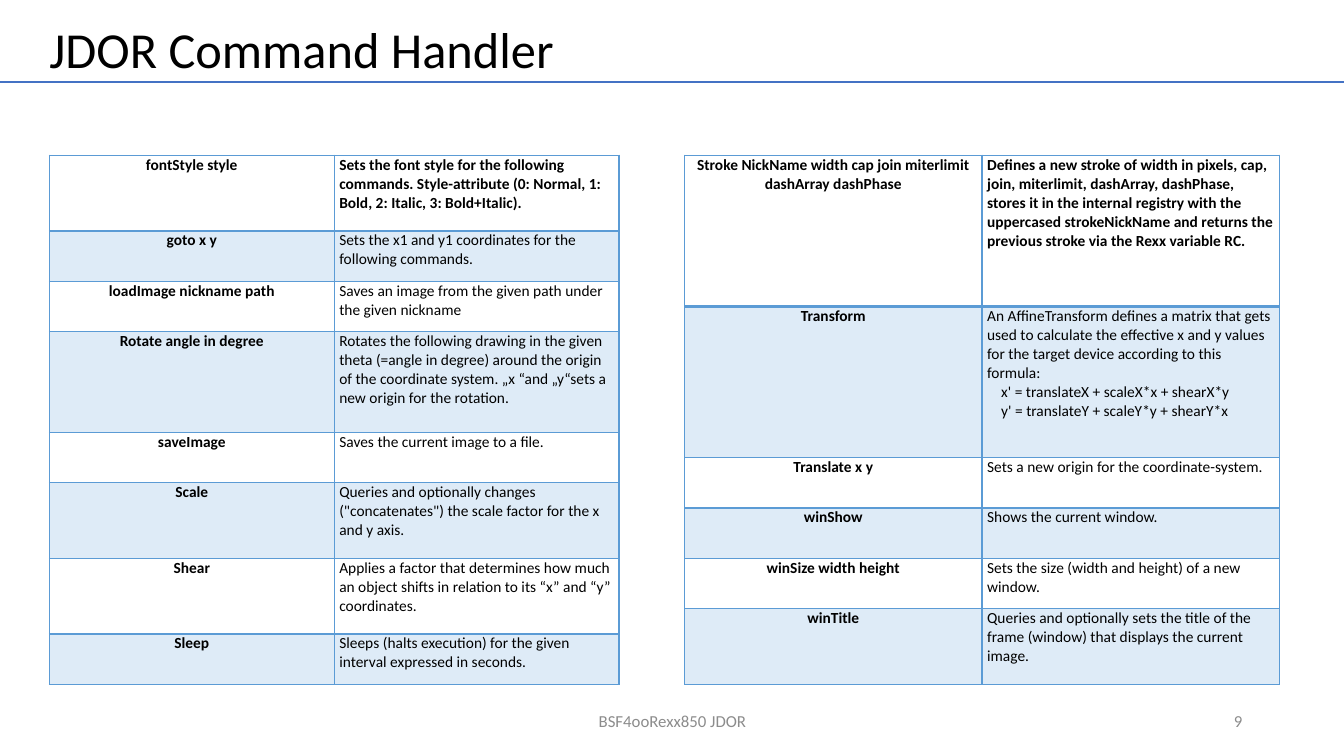
from lxml import etree
from pptx import Presentation
from pptx.dml.color import RGBColor
from pptx.enum.shapes import MSO_CONNECTOR
from pptx.enum.text import MSO_ANCHOR, PP_ALIGN
from pptx.oxml.ns import qn
from pptx.util import Inches, Pt

LEFT, CENTER, RIGHT = PP_ALIGN.LEFT, PP_ALIGN.CENTER, PP_ALIGN.RIGHT
MIDDLE = MSO_ANCHOR.MIDDLE
STRAIGHT = MSO_CONNECTOR.STRAIGHT

FONT = "Calibri"
BLACK, GREY, WHITE = "000000", "8C8C8C", "FFFFFF"
RULE, BORDER, BAND = "4472C4", "5B9BD5", "DEEBF7"

TITLE = "JDOR Command Handler"
FOOTERS = [
    ("BSF4ooRexx850 JDOR", 4.42, 4.5, CENTER),
    ("9", 9.42, 3, RIGHT),
]
TABLE_TOP = 1.54
FORMULA_INDENT = 0.14

DRAWING_COMMANDS = [
    (0.75, "fontStyle style",
     ["Sets the font style for the following commands. Style-attribute "
      "(0: Normal, 1: Bold, 2: Italic, 3: Bold+Italic)."]),
    (0.5, "goto x y",
     ["Sets the x1 and y1 coordinates for the following commands."]),
    (0.5, "loadImage nickname path",
     ["Saves an image from the given path under the given nickname"]),
    (1, "Rotate angle in degree",
     ["Rotates the following drawing in the given theta (=angle in degree) "
      "around the origin of the coordinate system. „x “and „y“sets a new "
      "origin for the rotation."]),
    (0.5, "saveImage", ["Saves the current image to a file."]),
    (0.75, "Scale",
     ['Queries and optionally changes ("concatenates") the scale factor '
      "for the x and y axis."]),
    (0.75, "Shear",
     ["Applies a factor that determines how much an object shifts in "
      "relation to its “x” and “y” coordinates."]),
    (0.5, "Sleep",
     ["Sleeps (halts execution) for the given interval expressed in seconds."]),
]
WINDOW_COMMANDS = [
    (1.5, "Stroke NickName width cap join miterlimit dashArray dashPhase",
     ["Defines a new stroke of width in pixels, cap, join, miterlimit, "
      "dashArray, dashPhase, stores it in the internal registry with the "
      "uppercased strokeNickName and returns the previous stroke via the "
      "Rexx variable RC."]),
    (1.5, "Transform",
     ["An AffineTransform defines a matrix that gets used to calculate the "
      "effective x and y values for the target device according to this "
      "formula:",
      "x' = translateX + scaleX*x + shearX*y\v"
      "y' = translateY + scaleY*y + shearY*x"]),
    (0.5, "Translate x y", ["Sets a new origin for the coordinate-system."]),
    (0.5, "winShow", ["Shows the current window."]),
    (0.5, "winSize width height",
     ["Sets the size (width and height) of a new window."]),
    (0.75, "winTitle",
     ["Queries and optionally sets the title of the frame (window) that "
      "displays the current image."]),
]
TABLES = [(0.49, 5.65, DRAWING_COMMANDS), (6.79, 5.9, WINDOW_COMMANDS)]


def rgb(value):
    return RGBColor.from_string(value)


def format_paragraph(p, size, color, align, bold=False):
    p.alignment = align
    p.font.name = FONT
    p.font.size = Pt(size)
    p.font.bold = bold
    p.font.color.rgb = rgb(color)


def set_borders(cell, bottom_width):
    tcPr = cell._tc.get_or_add_tcPr()
    widths = {"a:lnL": 1, "a:lnR": 1, "a:lnT": 1, "a:lnB": bottom_width}
    for i, (tag, width) in enumerate(widths.items()):
        ln = etree.Element(qn(tag), w=str(Pt(width)))
        fill = etree.SubElement(ln, qn("a:solidFill"))
        etree.SubElement(fill, qn("a:srgbClr"), val=BORDER)
        tcPr.insert(i, ln)


def fill_cell(cell, paragraphs, align, bold, row):
    cell.margin_left = cell.margin_right = Inches(0.05)
    cell.margin_top = cell.margin_bottom = 0
    cell.fill.solid()
    cell.fill.fore_color.rgb = rgb(BAND if row % 2 else WHITE)
    set_borders(cell, 1 if row else 2)
    tf = cell.text_frame
    tf.text = "\n".join(paragraphs)
    for p in tf.paragraphs:
        format_paragraph(p, 11, BLACK, align, bold)
    for p in tf.paragraphs[1:]:
        p._p.get_or_add_pPr().set("marL", str(Inches(FORMULA_INDENT)))


def add_command_table(slide, left, width, commands):
    height = sum(command[0] for command in commands)
    table = slide.shapes.add_table(
        len(commands), 2, Inches(left), Inches(TABLE_TOP),
        Inches(width), Inches(height)).table
    table.first_row = table.horz_banding = False
    for row, (row_height, name, description) in enumerate(commands):
        table.rows[row].height = Inches(row_height)
        fill_cell(table.cell(row, 0), [name], CENTER, True, row)
        fill_cell(table.cell(row, 1), description, LEFT, row == 0, row)


def main():
    prs = Presentation()
    prs.slide_width, prs.slide_height = Inches(13.33), Inches(7.5)
    slide = prs.slides.add_slide(prs.slide_layouts[5])

    title = slide.shapes.title
    title.left, title.top = Inches(0.39), Inches(-0.21)
    title.width, title.height = Inches(11.5), Inches(1.45)
    tf = title.text_frame
    tf.text = TITLE
    tf.vertical_anchor = MIDDLE
    format_paragraph(tf.paragraphs[0], 36, BLACK, LEFT)
    tf.paragraphs[0].line_spacing = 0.9

    rule = slide.shapes.add_connector(
        STRAIGHT, 0, Inches(0.81), prs.slide_width, Inches(0.81))
    rule.line.color.rgb = rgb(RULE)
    rule.line.width = Pt(1.5)
    etree.SubElement(rule._element.spPr, qn("a:effectLst"))

    for left, width, commands in TABLES:
        add_command_table(slide, left, width, commands)

    for text, left, width, align in FOOTERS:
        sp = slide.shapes.add_textbox(
            Inches(left), Inches(6.95), Inches(width), Inches(0.4))
        tf = sp.text_frame
        tf.word_wrap = True
        tf.vertical_anchor = MIDDLE
        tf.text = text
        format_paragraph(tf.paragraphs[0], 12, GREY, align)

    prs.save("out.pptx")


if __name__ == "__main__":
    main()
